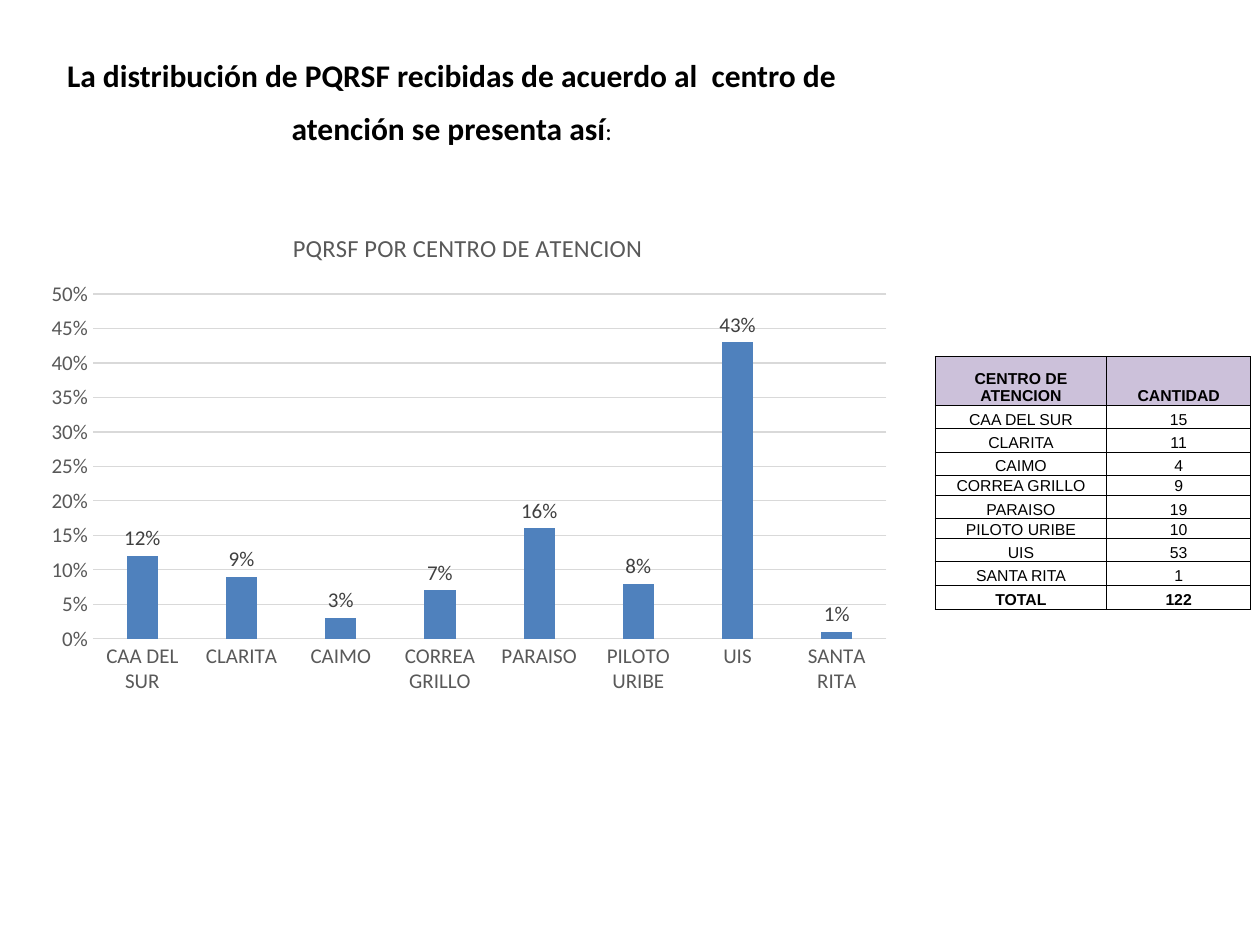
from typing import NamedTuple

from lxml import etree
from pptx import Presentation
from pptx.chart.data import CategoryChartData
from pptx.dml.color import RGBColor
from pptx.enum.chart import XL_CHART_TYPE, XL_LABEL_POSITION, XL_TICK_MARK
from pptx.enum.text import MSO_ANCHOR, MSO_AUTO_SIZE, PP_ALIGN
from pptx.oxml import parse_xml
from pptx.oxml.ns import nsdecls, qn
from pptx.util import Cm, Pt

COLUMN = XL_CHART_TYPE.COLUMN_CLUSTERED
OUTSIDE_END = XL_LABEL_POSITION.OUTSIDE_END
NO_TICK = XL_TICK_MARK.NONE
TOP, BOTTOM = MSO_ANCHOR.TOP, MSO_ANCHOR.BOTTOM
CENTER = PP_ALIGN.CENTER
FIT_SHAPE = MSO_AUTO_SIZE.SHAPE_TO_FIT_TEXT

BLACK = RGBColor(0x00, 0x00, 0x00)
BLUE = RGBColor(0x4F, 0x81, 0xBD)
LILAC = RGBColor(0xCC, 0xC1, 0xDA)
AXIS_GREY = RGBColor(0x59, 0x59, 0x59)
LABEL_GREY = RGBColor(0x40, 0x40, 0x40)
GRID_GREY = RGBColor(0xD9, 0xD9, 0xD9)


class Center(NamedTuple):
    name: str
    count: int
    share: float


CENTERS = [
    Center("CAA DEL SUR", 15, 0.12),
    Center("CLARITA", 11, 0.09),
    Center("CAIMO", 4, 0.03),
    Center("CORREA GRILLO", 9, 0.07),
    Center("PARAISO", 19, 0.16),
    Center("PILOTO URIBE", 10, 0.08),
    Center("UIS", 53, 0.43),
    Center("SANTA RITA", 1, 0.01),
]
COLUMN_WIDTHS = [3.46, 2.9]
ROW_HEIGHTS = [0.98, 0.47, 0.47, 0.47, 0.39, 0.47, 0.39, 0.47, 0.47, 0.48]


def style_font(font, name: str, size: float, color: RGBColor, bold: bool = False) -> None:
    font.name, font.size, font.bold = name, Pt(size), bold
    font.color.rgb = color


def add_title(s) -> None:
    title = s.shapes.title
    title.left, title.top, title.width, title.height = Cm(0.64), Cm(0.64), Cm(16.94), Cm(2.31)
    tf = title.text_frame
    tf.word_wrap, tf.auto_size, tf.vertical_anchor = True, FIT_SHAPE, TOP
    tf.margin_left = tf.margin_right = tf.margin_bottom = 0
    tf.margin_top = Cm(0.18)
    p = tf.paragraphs[0]
    p.text = ("La distribución de PQRSF recibidas de acuerdo al  centro de "
              "atención se presenta así")
    p.alignment, p.line_spacing, p.space_before = CENTER, Pt(30.3), Pt(0)
    style_font(p.runs[0].font, "Calibri", 18, BLACK, True)
    r = p.add_run()
    r.text = ":"
    style_font(r.font, "Calibri", 14, BLACK)


def add_share_chart(s) -> None:
    data = CategoryChartData(number_format="0%")
    data.categories = [c.name for c in CENTERS]
    data.add_series("Series 1", [c.share for c in CENTERS])
    chart = s.shapes.add_chart(COLUMN, Cm(0.64), Cm(4.24), Cm(17.58), Cm(9.93), data).chart
    style_font(chart.font, "Calibri", 12, BLACK)
    chart.has_legend = False
    chart.has_title = True
    p = chart.chart_title.text_frame.paragraphs[0]
    p.text = "PQRSF POR CENTRO DE ATENCION"
    style_font(p.runs[0].font, "Calibri", 14, AXIS_GREY)
    chart.chart_title.include_in_layout = False

    # Axes
    for axis in (chart.category_axis, chart.value_axis):
        axis.major_tick_mark = axis.minor_tick_mark = NO_TICK
        style_font(axis.tick_labels.font, "Calibri", 12, AXIS_GREY)
    values = chart.value_axis
    values.minimum_scale, values.maximum_scale, values.major_unit = 0, 0.5, 0.05
    values.tick_labels.number_format = "0%"
    values.tick_labels.number_format_is_linked = False
    values.format.line.fill.background()
    for line in (chart.category_axis.format.line, values.major_gridlines.format.line):
        line.color.rgb, line.width = GRID_GREY, Pt(0.75)

    # Columns and labels
    plot = chart.plots[0]
    plot.gap_width, plot.overlap, plot.vary_by_categories = 219, -27, False
    fill = plot.series[0].format.fill
    fill.solid()
    fill.fore_color.rgb = BLUE
    labels = plot.series[0].data_labels
    labels.show_value, labels.position = True, OUTSIDE_END
    labels.number_format, labels.number_format_is_linked = "0%", False
    style_font(labels.font, "Calibri", 12, LABEL_GREY)

    # Inner plot area as fractions of the chart
    area = chart.plots[0]._element.getparent()
    for old in area.findall(qn("c:layout")):
        area.remove(old)
    area.insert(0, parse_xml(
        f'<c:layout {nsdecls("c")}><c:manualLayout><c:layoutTarget val="inner"/>'
        '<c:xMode val="edge"/><c:yMode val="edge"/><c:x val="0.07"/><c:y val="0.17"/>'
        '<c:w val="0.91"/><c:h val="0.7"/></c:manualLayout></c:layout>'))


def set_borders(cell) -> None:
    props = cell._tc.get_or_add_tcPr()
    for i, side in enumerate(("a:lnL", "a:lnR", "a:lnT", "a:lnB")):
        line = etree.Element(qn(side), w=str(Pt(0.5)))
        fill = etree.SubElement(line, qn("a:solidFill"))
        etree.SubElement(fill, qn("a:srgbClr"), val=str(BLACK))
        props.insert(i, line)


def fill_cell(cell, text: str, bold: bool, header: bool) -> None:
    cell.margin_left = cell.margin_right = cell.margin_top = Cm(0.02)
    cell.margin_bottom = 0
    cell.vertical_anchor = BOTTOM
    if header:
        cell.fill.solid()
        cell.fill.fore_color.rgb = LILAC
    else:
        cell.fill.background()
    set_borders(cell)
    p = cell.text_frame.paragraphs[0]
    p.text, p.alignment = text, CENTER
    style_font(p.runs[0].font, "Arial", 9, BLACK, bold)


def add_count_table(s) -> None:
    rows = [("CENTRO DE ATENCION", "CANTIDAD")]
    rows += [(c.name, str(c.count)) for c in CENTERS]
    rows.append(("TOTAL", str(sum(c.count for c in CENTERS))))
    table = s.shapes.add_table(len(rows), 2, Cm(18.85), Cm(7.19),
                               Cm(sum(COLUMN_WIDTHS)), Cm(sum(ROW_HEIGHTS))).table
    table.horz_banding = False
    for column, width in zip(table.columns, COLUMN_WIDTHS):
        column.width = Cm(width)
    for i, (texts, height) in enumerate(zip(rows, ROW_HEIGHTS)):
        table.rows[i].height = Cm(height)
        for j, text in enumerate(texts):
            fill_cell(table.cell(i, j), text, i in (0, len(rows) - 1), i == 0)


def main() -> None:
    prs = Presentation()
    prs.slide_width, prs.slide_height = Cm(25.4), Cm(19.05)
    s = prs.slides.add_slide(prs.slide_layouts[5])
    add_title(s)
    add_count_table(s)
    add_share_chart(s)
    prs.save("out.pptx")


if __name__ == "__main__":
    main()
